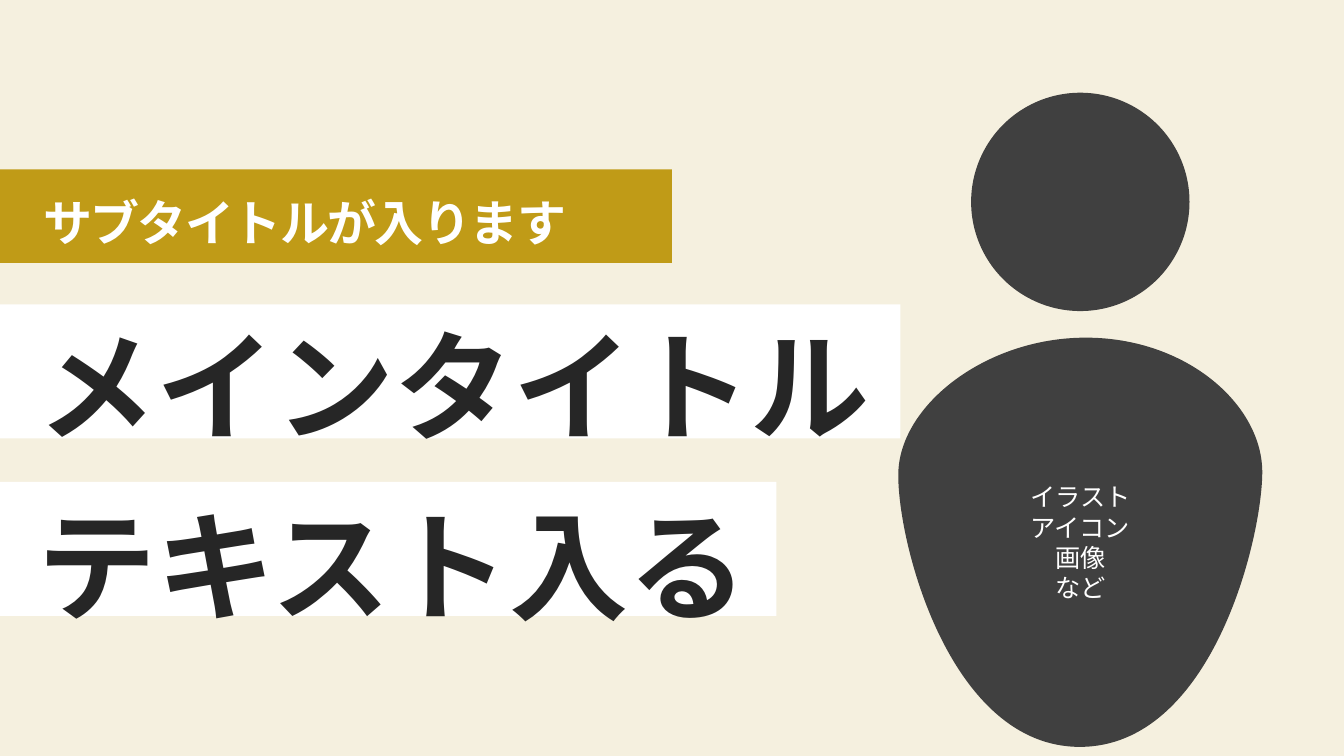
from dataclasses import dataclass

from lxml.etree import SubElement
from pptx import Presentation
from pptx.dml.color import RGBColor
from pptx.enum.lang import MSO_LANGUAGE_ID
from pptx.enum.shapes import MSO_SHAPE
from pptx.enum.text import MSO_ANCHOR, MSO_AUTO_SIZE, PP_ALIGN
from pptx.oxml.ns import qn
from pptx.util import Inches, Pt


@dataclass(frozen=True)
class Theme:
    cream: str = "F5F0DF"
    gold: str = "C09B17"
    white: str = "FFFFFF"
    ink: str = "262626"
    gray: str = "404040"
    head: str = "Noto Sans CJK JP"
    body: str = "Lato"
    main: int = 85
    sub: int = 35
    note: int = 18


T = Theme()
WIDE, HIGH = 13.33, 7.5


def paint(shape, color):
    shape.fill.solid()
    shape.fill.fore_color.rgb = RGBColor.from_string(color)
    shape.line.fill.background()
    shape.shadow.inherit = False


def write(shape, lines, face, size, color, bold=False,
          align=PP_ALIGN.LEFT, anchor=MSO_ANCHOR.TOP, track=0):
    frame = shape.text_frame
    frame.word_wrap = True
    frame.auto_size = MSO_AUTO_SIZE.NONE
    frame.vertical_anchor = anchor
    frame.text = "\n".join(lines)
    for para in frame.paragraphs:
        para.alignment = align
        font = para.font
        font.name, font.size, font.bold = face, Pt(size), bold
        font.color.rgb = RGBColor.from_string(color)
        # East Asian face and letter spacing
        props = para._p.pPr.find(qn("a:defRPr"))
        SubElement(props, qn("a:ea")).set("typeface", face)
        if track:
            props.set("spc", str(round(track * 100)))
        # Japanese forms of the characters
        for run in para.runs:
            run.font.language_id = MSO_LANGUAGE_ID.JAPANESE


def place(shape, box):
    shape.left, shape.top, shape.width, shape.height = map(Inches, box)


def band(slide, box, color):
    bar = slide.shapes.add_shape(MSO_SHAPE.RECTANGLE, *map(Inches, box))
    paint(bar, color)


def subtitle(slide, box, text):
    x, y, w, h = box
    band(slide, box, T.gold)
    label = slide.shapes.add_textbox(
        *map(Inches, (x + 0.33, y + 0.18, w - 0.15, 0.69)))
    write(label, [text], T.head, T.sub, T.white, bold=True, track=-1.2)


def headline(slide, box, text, drop, label=None):
    x, y, w, h = box
    band(slide, box, T.white)
    if label is None:
        label = slide.shapes.add_textbox(0, 0, 0, 0)
    else:
        # Lift the title above its band
        slide.shapes._spTree.append(label._element)
    place(label, (x + 0.27, y + drop, 9.48, 1.53))
    write(label, [text], T.head, T.main, T.ink, bold=True)


def bend(shape):
    """Turn each three line segments into one cubic Bezier curve."""
    lines = list(shape._element.iter(qn("a:lnTo")))
    for trio in zip(lines[::3], lines[1::3], lines[2::3]):
        cubic = trio[0].makeelement(qn("a:cubicBezTo"))
        trio[0].addprevious(cubic)
        for line in trio:
            cubic.append(line[0])
            line.getparent().remove(line)


def figure(slide, box, lines):
    x, y, w, h = box
    # Head
    size = 0.6 * w
    head = slide.shapes.add_shape(
        MSO_SHAPE.OVAL, *map(Inches, (x + 0.2 * w, y, size, size)))
    paint(head, T.gray)
    # Body: two handles and an end for each curve, from the corner of the box
    start = (1.86, 2.43)
    knots = [(2.86, 2.43), (3.62, 3.1), (3.61, 3.78),
             (3.6, 4.46), (3.1, 6.49), (1.8, 6.49),
             (0.51, 6.49), (-0.01, 4.46), (0, 3.78),
             (0.01, 3.1), (0.87, 2.43), start]
    pen = slide.shapes.build_freeform(
        Inches(x + start[0]), Inches(y + start[1]), scale=1.0)
    pen.add_line_segments(
        [(Inches(x + p), Inches(y + q)) for p, q in knots], close=True)
    body = pen.convert_to_shape()
    bend(body)
    paint(body, T.gray)
    write(body, lines, T.body, T.note, T.white,
          align=PP_ALIGN.CENTER, anchor=MSO_ANCHOR.MIDDLE)


def cover(deck):
    slide = deck.slides.add_slide(deck.slide_layouts[5])
    # Backdrop
    band(slide, (0, 0, WIDE, HIGH), T.cream)
    # Title bands
    headline(slide, (0, 4.78, 7.7, 1.33), "テキスト入る", 0.06)
    subtitle(slide, (0, 1.68, WIDE / 2, 0.93), "サブタイトルが入ります")
    headline(slide, (0, 3.02, 0.67 * WIDE, 1.33), "メインタイトル", 0.03,
             slide.shapes.title)
    # Person
    figure(slide, (8.91, 0.92, 3.61, 6.49), ["イラスト", "アイコン", "画像", "など"])


def main():
    deck = Presentation()
    deck.slide_width, deck.slide_height = Inches(WIDE), Inches(HIGH)
    cover(deck)
    deck.save("out.pptx")


if __name__ == "__main__":
    main()
